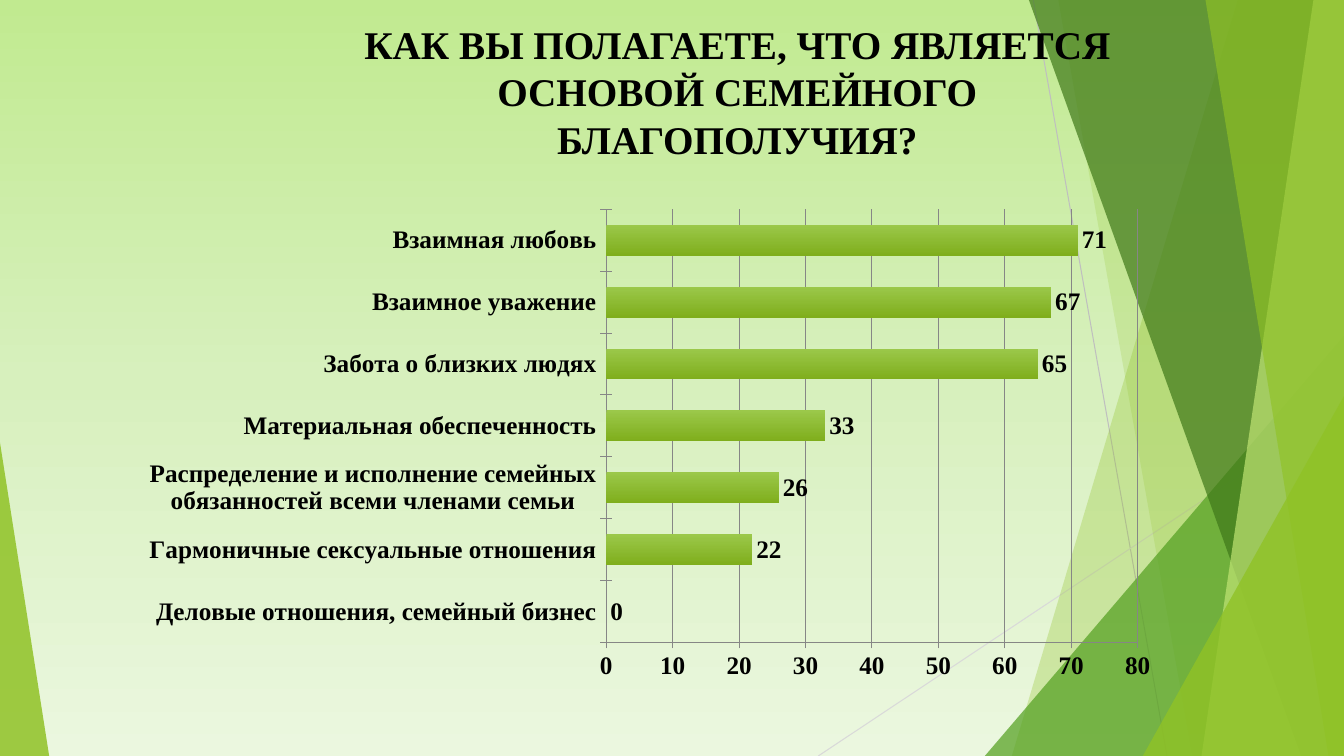
from copy import deepcopy
from dataclasses import dataclass

from lxml import etree
from pptx import Presentation
from pptx.chart.data import CategoryChartData
from pptx.dml.color import RGBColor
from pptx.enum.chart import XL_CHART_TYPE, XL_LABEL_POSITION, XL_TICK_MARK
from pptx.enum.shapes import MSO_CONNECTOR, MSO_SHAPE
from pptx.enum.text import MSO_ANCHOR, MSO_AUTO_SIZE, PP_ALIGN
from pptx.oxml.ns import qn
from pptx.util import Cm, Pt

BAR_CLUSTERED = XL_CHART_TYPE.BAR_CLUSTERED
OUTSIDE_END = XL_LABEL_POSITION.OUTSIDE_END
TICK_CROSS = XL_TICK_MARK.CROSS
STRAIGHT = MSO_CONNECTOR.STRAIGHT
TRIANGLE = MSO_SHAPE.ISOSCELES_TRIANGLE
MIDDLE = MSO_ANCHOR.MIDDLE
NO_AUTOFIT = MSO_AUTO_SIZE.NONE
CENTER = PP_ALIGN.CENTER

WIDTH, HEIGHT = 33.87, 19.05
DOWNWARD = 270

TITLE = "КАК ВЫ ПОЛАГАЕТЕ, ЧТО ЯВЛЯЕТСЯ ОСНОВОЙ СЕМЕЙНОГО БЛАГОПОЛУЧИЯ?"
ANSWERS = {
    "Деловые отношения, семейный бизнес": 0,
    "Гармоничные сексуальные отношения": 22,
    "Распределение и исполнение семейных обязанностей всеми членами семьи": 26,
    "Материальная обеспеченность": 33,
    "Забота о близких людях": 65,
    "Взаимное уважение": 67,
    "Взаимная любовь": 71,
}


@dataclass(frozen=True)
class Theme:
    font: str = "Times New Roman"
    title_size: int = 28
    chart_size: int = 18
    text: str = "000000"
    axis: str = "868686"
    lime: str = "90C226"
    green: str = "54A021"
    forest: str = "3F7819"
    pale: str = "C0E474"
    ray: str = "BFBFBF"
    faint_ray: str = "D9D9D9"
    backdrop: tuple = ("C1EA90", "D7F0BD", "EBF7DF")
    bar: tuple = ("9BC84A", "7FAE1C")


def rgb(color):
    return RGBColor.from_string(color)


def format_font(font, theme, size, bold=True):
    font.name = theme.font
    font.size = Pt(size)
    font.bold = bold
    font.color.rgb = rgb(theme.text)


def write_text(frame, text, theme, size, align=CENTER):
    para = frame.paragraphs[0]
    para.alignment = align
    span = para.add_run()
    span.text = text
    format_font(span.font, theme, size)


def fill_gradient(fill, colors):
    """Fill from top to bottom with evenly spaced colours."""
    fill.gradient()
    fill.gradient_angle = DOWNWARD
    stops = fill.gradient_stops
    while len(stops) < len(colors):
        first = next(fill._xPr.iter(qn("a:gs")))
        first.addnext(deepcopy(first))
        stops = fill.gradient_stops
    for index, (stop, color) in enumerate(zip(stops, colors)):
        stop.color.rgb = rgb(color)
        stop.position = index / (len(colors) - 1)


class SlideBuilder:
    def __init__(self, slide, theme):
        self.slide = slide
        self.theme = theme
        self.shapes = slide.shapes

    def background(self):
        fill_gradient(self.slide.background.fill, self.theme.backdrop)

    def ray(self, start, end, color):
        line = self.shapes.add_connector(STRAIGHT, *map(Cm, start + end))
        line.line.color.rgb = rgb(color)
        line.line.width = Pt(0.75)
        etree.SubElement(line._element.spPr, qn("a:effectLst"))

    def paint(self, shape, color, opacity):
        shape.shadow.inherit = False
        shape.fill.solid()
        shape.fill.fore_color.rgb = rgb(color)
        shape.line.fill.background()
        color_node = next(shape._element.spPr.iter(qn("a:srgbClr")))
        etree.SubElement(color_node, qn("a:alpha"), val=str(opacity * 1000))

    def band(self, top_left, bottom_left, color, opacity):
        """Draw a full-height band that reaches the right edge."""
        outline = self.shapes.build_freeform(Cm(top_left), 0)
        corners = [(WIDTH, 0), (WIDTH, HEIGHT), (bottom_left, HEIGHT)]
        outline.add_line_segments([(Cm(x), Cm(y)) for x, y in corners])
        self.paint(outline.convert_to_shape(), color, opacity)

    def corner(self, left, top, width, apex, color, opacity):
        """Draw a triangle that stands on the bottom edge."""
        box = map(Cm, (left, top, width, HEIGHT - top))
        shape = self.shapes.add_shape(TRIANGLE, *box)
        shape.adjustments[0] = apex
        self.paint(shape, color, opacity)

    def title(self, text, left, top, width, height):
        box = self.shapes.title
        box.left, box.top, box.width, box.height = map(Cm, (left, top, width, height))
        frame = box.text_frame
        frame.word_wrap = True
        frame.auto_size = NO_AUTOFIT
        frame.vertical_anchor = MIDDLE
        write_text(frame, text, self.theme, self.theme.title_size)
        self.shapes._spTree.append(box._element)

    def bar_chart(self, values, left, top, width, height):
        data = CategoryChartData()
        data.categories = list(values)
        data.add_series("Series 1", list(values.values()))
        frame = self.shapes.add_chart(
            BAR_CLUSTERED, *map(Cm, (left, top, width, height)), data)
        chart = frame.chart
        chart.has_legend = False
        chart.has_title = False
        format_font(chart.font, self.theme, self.theme.chart_size)
        plot = chart.plots[0]
        plot.gap_width = 100
        plot.vary_by_categories = False
        fill_gradient(plot.series[0].format.fill, self.theme.bar)
        plot.has_data_labels = True
        labels = plot.data_labels
        labels.show_value = True
        labels.position = OUTSIDE_END
        format_font(labels.font, self.theme, self.theme.chart_size)
        scale = chart.value_axis
        scale.minimum_scale, scale.maximum_scale, scale.major_unit = 0, 80, 10
        scale.has_major_gridlines = True
        lines = [scale.major_gridlines.format.line]
        for axis in (scale, chart.category_axis):
            axis.major_tick_mark = TICK_CROSS
            format_font(axis.tick_labels.font, self.theme, self.theme.chart_size)
            lines.append(axis.format.line)
        for line in lines:
            line.color.rgb = rgb(self.theme.axis)
            line.width = Pt(0.75)
        self.place_plot(chart, x=0.46, y=0.02, w=0.51, h=0.89)

    def place_plot(self, chart, **shares):
        """Fix the inner plot area as shares of the chart frame."""
        area = chart._chartSpace.chart.plotArea
        for old in area.findall(qn("c:layout")):
            area.remove(old)
        layout = etree.Element(qn("c:layout"))
        manual = etree.SubElement(layout, qn("c:manualLayout"))
        settings = {"layoutTarget": "inner", "xMode": "edge", "yMode": "edge", **shares}
        for name, value in settings.items():
            etree.SubElement(manual, qn(f"c:{name}"), val=str(value))
        area.insert(0, layout)


def main():
    deck = Presentation()
    deck.slide_width, deck.slide_height = Cm(WIDTH), Cm(HEIGHT)
    theme = Theme()
    page = SlideBuilder(deck.slides.add_slide(deck.slide_layouts[5]), theme)
    page.background()
    page.ray((26.04, 0), (29.41, HEIGHT), theme.ray)
    page.ray((WIDTH, 10.24), (20.62, HEIGHT), theme.faint_ray)
    page.band(31.19, 25.5, theme.lime, 30)
    page.band(26.67, 30.05, theme.lime, 20)
    page.corner(24.82, 8.46, 9.05, 1, theme.green, 72)
    page.band(25.93, 32.79, theme.forest, 70)
    page.band(33.1, 30.28, theme.pale, 70)
    page.band(30.38, 33.48, theme.lime, 65)
    page.corner(28.8, 9.98, 5.07, 1, theme.lime, 80)
    page.corner(0, 11.15, 1.24, 0, theme.lime, 85)
    page.title(TITLE, 8.13, 0.46, 20.9, 3.68)
    page.bar_chart(ANSWERS, 3.2, 5.03, 26.26, 12.27)
    deck.save("out.pptx")


if __name__ == "__main__":
    main()
